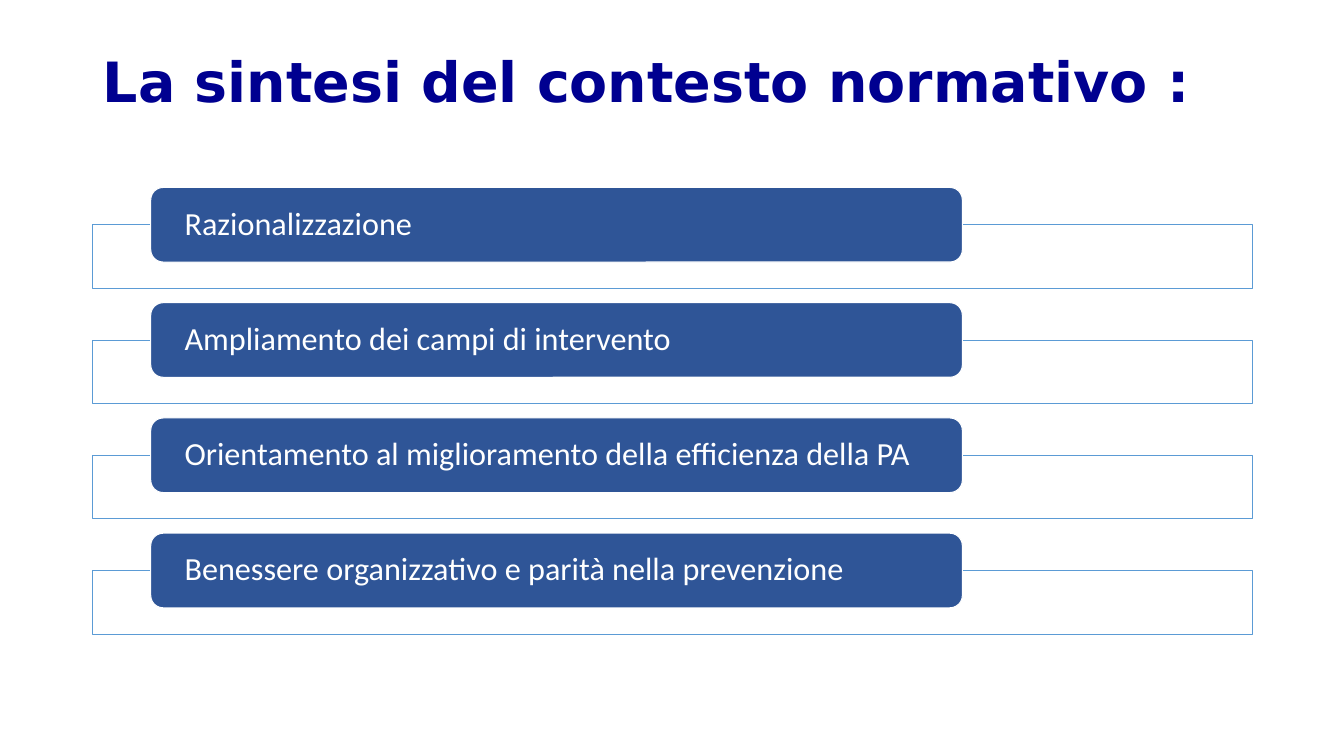
from lxml.etree import SubElement
from pptx import Presentation
from pptx.dml.color import RGBColor
from pptx.enum.shapes import MSO_SHAPE as SHAPE
from pptx.enum.text import MSO_ANCHOR as ANCHOR, PP_ALIGN as ALIGN
from pptx.oxml.ns import qn
from pptx.util import Inches, Pt

TITLE = "La sintesi del contesto normativo :"
THEMES = [
    "Razionalizzazione",
    "Ampliamento dei campi di intervento",
    "Orientamento al miglioramento della efficienza della PA",
    "Benessere organizzativo e parità nella prevenzione",
]


def rgb(value):
    return RGBColor.from_string(value)


def write_text(tf, text, font, size, color, bold=False):
    tf.word_wrap = True
    p = tf.paragraphs[0]
    p.text = text
    p.alignment = ALIGN.LEFT
    p.line_spacing = 0.9
    p.font.name = font
    p.font.size = Pt(size)
    p.font.bold = bold
    p.font.color.rgb = rgb(color)


def add_box(slide, shape, left, top, width, height, fill, line, weight):
    s = slide.shapes.add_shape(
        shape, Inches(left), Inches(top), Inches(width), Inches(height)
    )
    s.shadow.inherit = False
    s.fill.solid()
    s.fill.fore_color.rgb = rgb(fill)
    s.line.color.rgb = rgb(line)
    s.line.width = Pt(weight)
    return s


def set_opacity(s, percent):
    color = s._element.spPr.find(qn("a:solidFill")).find(qn("a:srgbClr"))
    SubElement(color, qn("a:alpha"), val=str(percent * 1000))


def place_title(slide, left, top, width, height):
    s = slide.shapes.title
    s.left, s.top = Inches(left), Inches(top)
    s.width, s.height = Inches(width), Inches(height)
    tf = s.text_frame
    tf.vertical_anchor = ANCHOR.TOP
    tf.margin_top = Inches(0.14)
    write_text(tf, TITLE, "DejaVu Sans", 39.6, "000090", bold=True)


def add_theme(slide, text, left, top, width):
    frame = add_box(slide, SHAPE.RECTANGLE, left, top + 0.37, width, 0.63,
                    "FFFFFF", "5B9BD5", 0.5)
    set_opacity(frame, 90)
    bar = add_box(slide, SHAPE.ROUNDED_RECTANGLE, left + width * 0.05, top,
                  width * 0.7, 0.74, "2F5597", "FFFFFF", 0.75)
    tf = bar.text_frame
    tf.vertical_anchor = ANCHOR.MIDDLE
    tf.margin_left = tf.margin_right = Inches(0.3)
    tf.margin_top = tf.margin_bottom = 0
    write_text(tf, text, "Calibri", 23, "FFFFFF")


def add_theme_list(slide, left, top, width, height):
    pitch = (height - 1) / (len(THEMES) - 1)
    for i, text in enumerate(THEMES):
        add_theme(slide, text, left, top + i * pitch, width)


def main():
    prs = Presentation()
    prs.slide_width, prs.slide_height = Inches(13.33), Inches(7.5)
    slide = prs.slides.add_slide(prs.slide_layouts[5])
    place_title(slide, 0.92, 0.4, 11.5, 1.45)
    add_theme_list(slide, 0.92, 1.86, 11.5, 4.43)
    prs.save("out.pptx")


if __name__ == "__main__":
    main()
